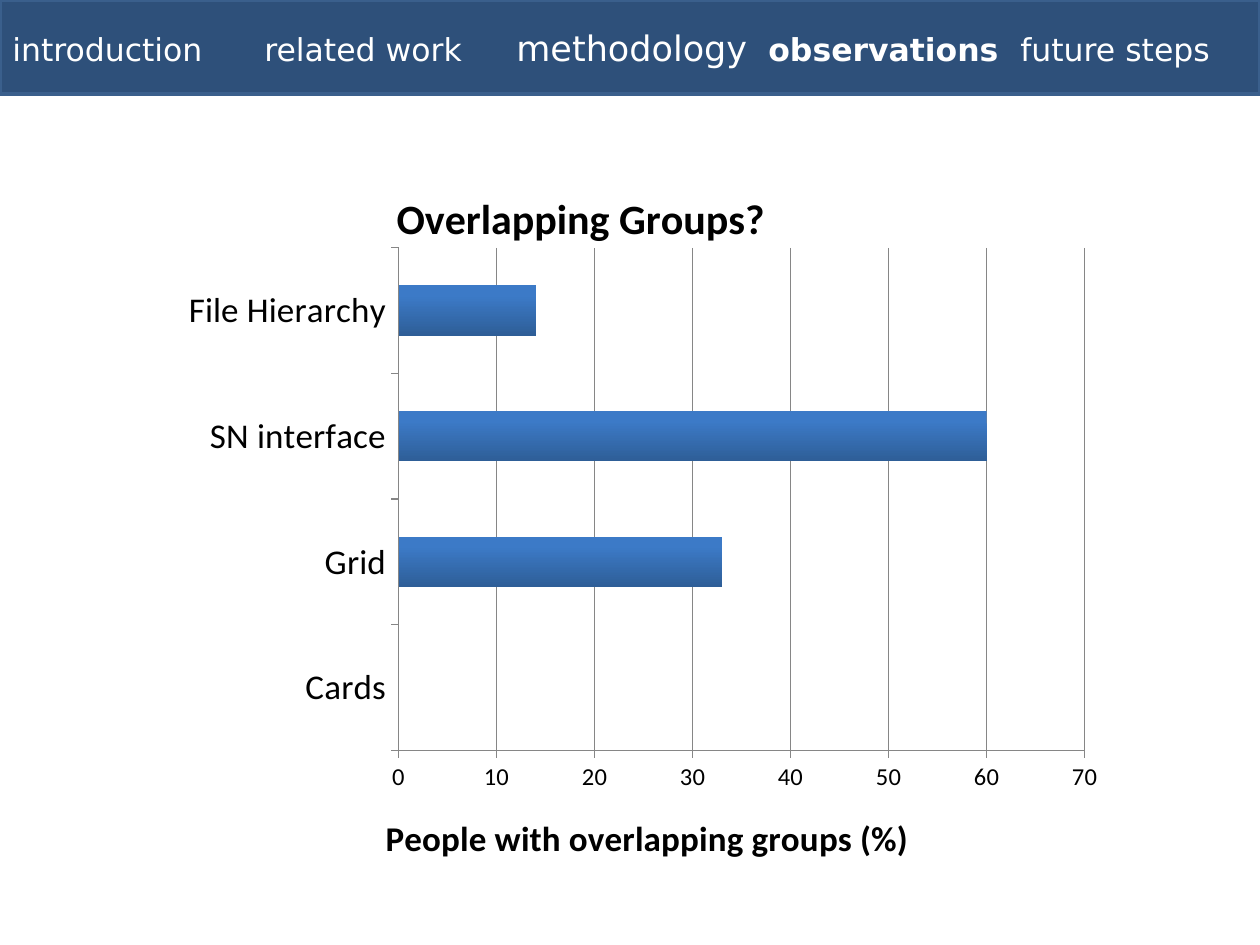
import lxml.etree
import pptx
import pptx.chart.data
import pptx.dml.color
import pptx.enum.chart
import pptx.enum.shapes
import pptx.enum.text
import pptx.oxml.ns
import pptx.util
from pptx.util import Cm

BODY_FONT = "Calibri"
MENU_FONT = "DejaVu Sans"
GRID_GRAY = "868686"


def rgb(hex_string):
    return pptx.dml.color.RGBColor.from_string(hex_string)


def add_text(paragraph, text, *, size, font=BODY_FONT, color="000000", bold=False):
    run = paragraph.add_run()
    run.text = text
    run.font.size = pptx.util.Pt(size)
    run.font.name = font
    run.font.bold = bold
    run.font.color.rgb = rgb(color)


presentation = pptx.Presentation()
presentation.slide_width = Cm(25.4)
presentation.slide_height = Cm(19.05)
slide = presentation.slides.add_slide(presentation.slide_layouts[6])

# Navigation bar: the default tab stops separate the sections
bar = slide.shapes.add_shape(
    pptx.enum.shapes.MSO_SHAPE.RECTANGLE, 0, 0, presentation.slide_width, Cm(1.9))
bar.shadow.inherit = False
bar.fill.solid()
bar.fill.fore_color.rgb = rgb("2E507A")
bar.line.color.rgb = rgb("3A5F8C")
bar.line.width = pptx.util.Pt(2)
bar.text_frame.vertical_anchor = pptx.enum.text.MSO_ANCHOR.MIDDLE
menu = bar.text_frame.paragraphs[0]
menu.alignment = pptx.enum.text.PP_ALIGN.LEFT
for section, size, bold in [
    ("introduction\t", 18, False),
    ("related work\t", 18, False),
    ("methodology\t", 20, False),
    ("observations\t", 18, True),
    ("future steps", 18, False),
]:
    add_text(menu, section, size=size, bold=bold, font=MENU_FONT, color="FFFFFF")

# Bar chart
chart_data = pptx.chart.data.CategoryChartData()
chart_data.categories = ["Cards", "Grid", "SN interface", "File Hierarchy"]
chart_data.add_series("Series 1", [0, 33, 60, 14])
chart = slide.shapes.add_chart(
    pptx.enum.chart.XL_CHART_TYPE.BAR_CLUSTERED,
    Cm(2.97), Cm(2.97), Cm(19.48), Cm(14.6), chart_data).chart
chart.has_legend = False
chart.font.name = BODY_FONT
chart.font.size = pptx.util.Pt(10)
chart.font.color.rgb = rgb("000000")

plot = chart.plots[0]
plot.vary_by_categories = False
plot.gap_width = 150
fill = plot.series[0].format.fill
fill.gradient()
fill.gradient_angle = 270
for stop, position, color in zip(fill.gradient_stops, (0.2, 1), ("3C7AC7", "2E5E97")):
    stop.position = position
    stop.color.rgb = rgb(color)

for axis, label_size in [(chart.category_axis, 20), (chart.value_axis, 14)]:
    axis.tick_labels.font.size = pptx.util.Pt(label_size)
    axis.major_tick_mark = pptx.enum.chart.XL_TICK_MARK.OUTSIDE
    axis.format.line.color.rgb = rgb(GRID_GRAY)
chart.value_axis.minimum_scale = 0
chart.value_axis.maximum_scale = 70
chart.value_axis.major_unit = 10
chart.value_axis.has_major_gridlines = True
chart.value_axis.major_gridlines.format.line.color.rgb = rgb(GRID_GRAY)

chart.has_title = True
chart_title = chart.chart_title
axis_title = chart.value_axis.axis_title
add_text(chart_title.text_frame.paragraphs[0], "Overlapping Groups?", size=24, bold=True)
add_text(axis_title.text_frame.paragraphs[0], "People with overlapping groups (%)",
         size=20, bold=True)

# Manual positions, as fractions of the chart's size
qn = pptx.oxml.ns.qn
plot_area = chart.element.find(".//" + qn("c:plotArea"))
for parent, index, settings in [
    (chart_title.text_frame._txBody.getparent().getparent(), 1,
     {"xMode": "edge", "yMode": "edge", "x": 0.25, "y": 0.05}),
    (axis_title.text_frame._txBody.getparent().getparent(), 1,
     {"xMode": "edge", "yMode": "edge", "x": 0.24, "y": 0.92}),
    (plot_area, 0,
     {"layoutTarget": "inner", "xMode": "edge", "yMode": "edge",
      "x": 0.26, "y": 0.14, "w": 0.71, "h": 0.7}),
]:
    for old_layout in parent.findall(qn("c:layout")):
        parent.remove(old_layout)
    layout = lxml.etree.Element(qn("c:layout"))
    manual = lxml.etree.SubElement(layout, qn("c:manualLayout"))
    for name, value in settings.items():
        lxml.etree.SubElement(manual, qn("c:" + name)).set("val", str(value))
    parent.insert(index, layout)

presentation.save("out.pptx")
